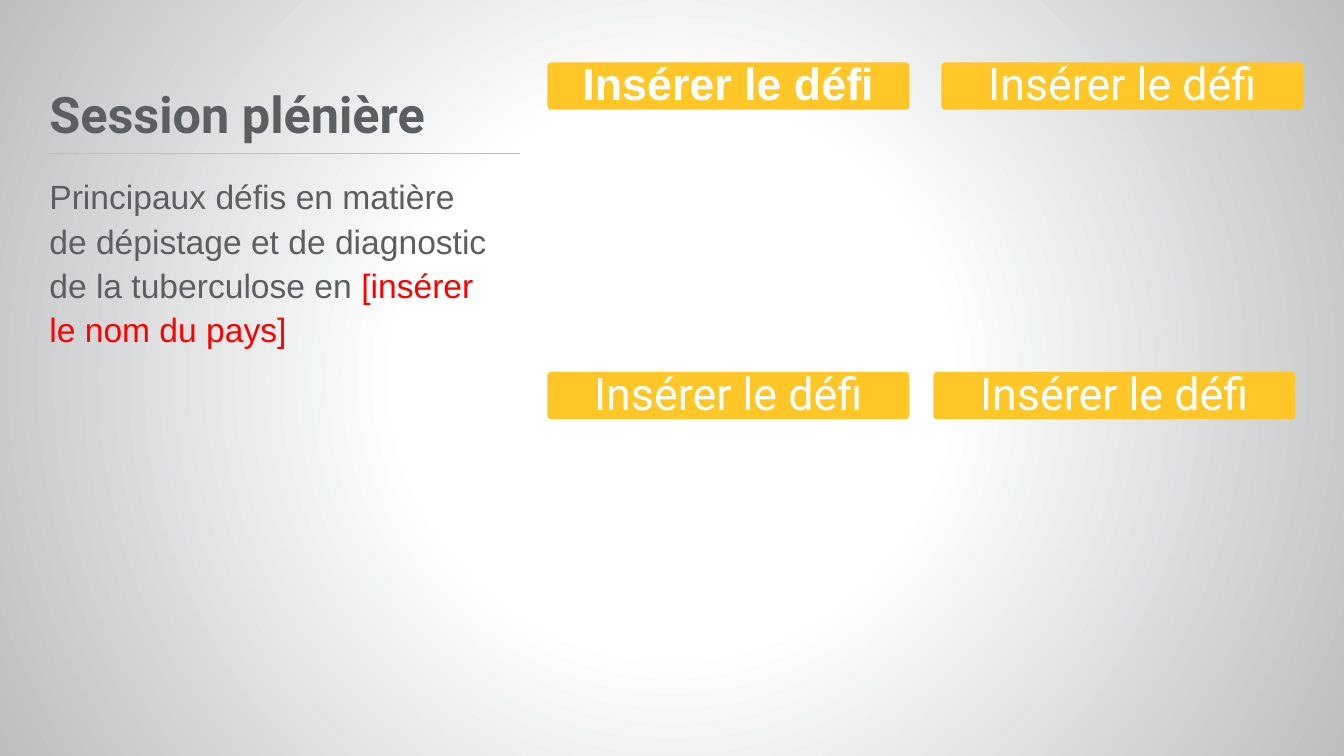
from lxml import etree
from pptx import Presentation
from pptx.dml.color import RGBColor
from pptx.enum.shapes import MSO_CONNECTOR, MSO_SHAPE
from pptx.enum.text import MSO_ANCHOR, PP_ALIGN
from pptx.oxml import parse_xml
from pptx.oxml.ns import nsdecls, qn
from pptx.util import Pt

STRAIGHT = MSO_CONNECTOR.STRAIGHT
ROUNDED = MSO_SHAPE.ROUNDED_RECTANGLE
TOP, MIDDLE, BOTTOM = MSO_ANCHOR.TOP, MSO_ANCHOR.MIDDLE, MSO_ANCHOR.BOTTOM
LEFT, CENTER = PP_ALIGN.LEFT, PP_ALIGN.CENTER

GREY, SILVER, YELLOW, WHITE, RED = "5C5F61", "BCBEC0", "FFC628", "FFFFFF", "FF0000"
MARGIN = 35.3
COLUMN_WIDTH = 321.1


def rgb(hex_color):
    return RGBColor.from_string(hex_color)


def write(shape, text, font, size, color, bold, anchor, align, spacing):
    """Fill a shape with one formatted paragraph and return that paragraph."""
    frame = shape.text_frame
    frame.word_wrap = True
    frame.vertical_anchor = anchor
    frame.margin_left = frame.margin_right = Pt(0)
    frame.margin_top = frame.margin_bottom = Pt(3.6)
    paragraph = frame.paragraphs[0]
    paragraph.alignment = align
    paragraph.line_spacing = spacing
    paragraph.add_run().text = text
    paragraph.font.name = font
    paragraph.font.size = Pt(size)
    paragraph.font.bold = bold
    paragraph.font.color.rgb = rgb(color)
    return paragraph


prs = Presentation()
prs.slide_width, prs.slide_height = Pt(960), Pt(540)
slide = prs.slides.add_slide(prs.slide_layouts[6])

# Radial background: white centre fading to silver
slide.background.fill.solid()
background = slide.element.find(".//" + qn("p:bgPr"))
stops = "".join(
    f'<a:gs pos="{percent * 1000}"><a:srgbClr val="{color}"/></a:gs>'
    for percent, color in [(0, WHITE), (35, WHITE), (100, SILVER)]
)
background.replace(background[0], parse_xml(
    f'<a:gradFill {nsdecls("a")} rotWithShape="1"><a:gsLst>{stops}</a:gsLst>'
    '<a:path path="circle"><a:fillToRect l="50000" t="50000" r="50000" b="50000"/></a:path>'
    '</a:gradFill>'
))

# Left column: title, rule and topic
rule = slide.shapes.add_connector(STRAIGHT, Pt(MARGIN), Pt(110), Pt(371.5), Pt(110))
rule.line.color.rgb = rgb(SILVER)
rule.line.width = Pt(0.75)
etree.SubElement(rule.element.spPr, qn("a:effectLst"))

title = slide.shapes.add_textbox(Pt(MARGIN), Pt(15.8), Pt(COLUMN_WIDTH), Pt(90.7))
write(title, "Session plénière", "Roboto", 36, GREY, True, BOTTOM, LEFT, 0.9)

topic = slide.shapes.add_textbox(Pt(MARGIN), Pt(119.5), Pt(COLUMN_WIDTH), Pt(283))
topic_line = write(
    topic,
    "Principaux défis en matière de dépistage et de diagnostic de la tuberculose en ",
    "Arial", 24, GREY, False, TOP, LEFT, 1.1,
)
country = topic_line.add_run()
country.text = "[insérer le nom du pays]"
country.font.color.rgb = rgb(RED)

# Challenge headings: left, top, font, bold
challenges = [
    (391, 44.6, "Arial", True),
    (672.5, 44.6, "Roboto", False),
    (391, 265.7, "Roboto", False),
    (666.7, 265.7, "Roboto", False),
]
for left, top, font, bold in challenges:
    heading = slide.shapes.add_shape(ROUNDED, Pt(left), Pt(top), Pt(258.5), Pt(33.8))
    heading.adjustments[0] = 0.08
    heading.shadow.inherit = False
    heading.fill.solid()
    heading.fill.fore_color.rgb = rgb(YELLOW)
    heading.line.fill.background()
    write(heading, "Insérer le défi", font, 32, WHITE, bold, MIDDLE, CENTER, 0.9)

prs.save("out.pptx")
